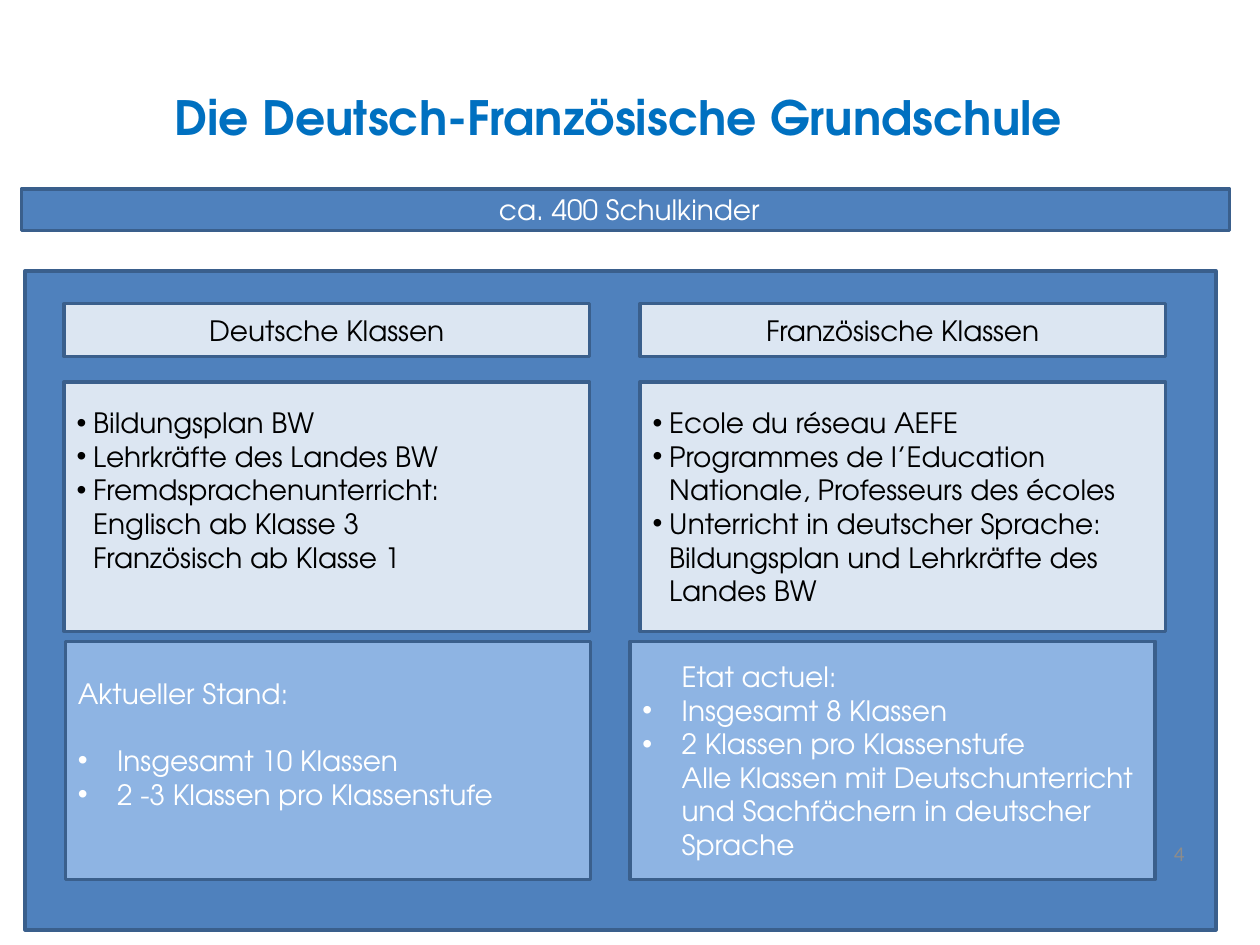
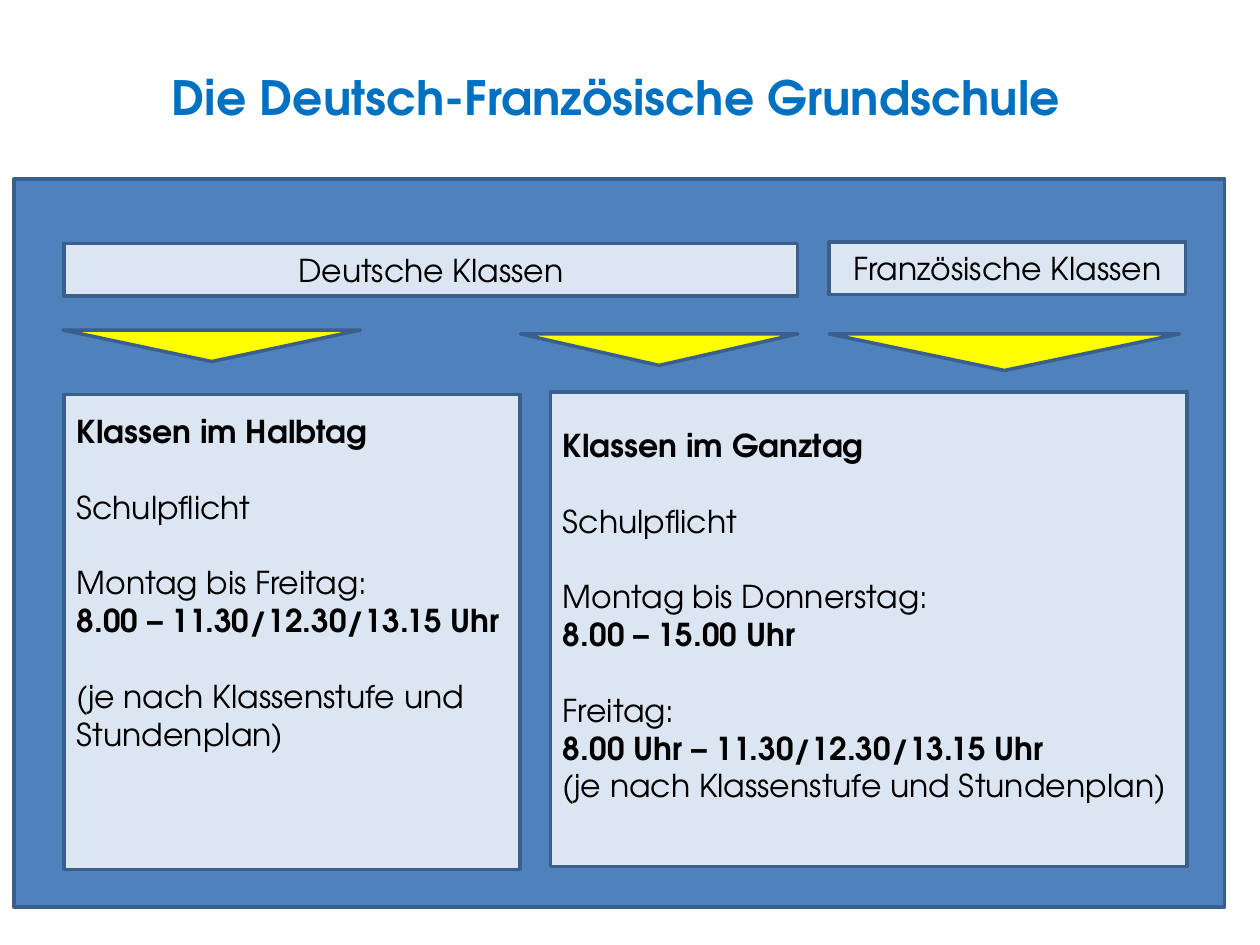
from typing import Any, NamedTuple

from lxml.etree import SubElement
from pptx import Presentation
from pptx.dml.color import RGBColor
from pptx.enum.shapes import MSO_SHAPE
from pptx.enum.text import MSO_ANCHOR, MSO_AUTO_SIZE, PP_ALIGN
from pptx.oxml.ns import qn
from pptx.util import Pt

TITLE = "Die Deutsch-Französische Grundschule "
HEADING_FONT = "TeX Gyre Adventor"
NUMBER_FONT = "Calibri"
TITLE_BLUE, PANEL_BLUE, EDGE_BLUE = "0070C0", "4F81BD", "3A5F8C"
MID_BLUE, PALE_BLUE, YELLOW = "8EB4E3", "DCE6F2", "FFFF00"
WHITE, BLACK, GREY = "FFFFFF", "000000", "8C8C8C"
LINE_HEIGHT = 1.2
SMALL_HANG, WIDE_HANG = 9.5, 22.5


class Area(NamedTuple):
    left: float
    top: float
    width: float
    height: float


class Line(NamedTuple):
    text: str
    bullet: bool = False
    bold: bool = False
    gap: bool = False  # leaves one line free above
    indent: float = 0


class Card(NamedTuple):
    area: Area
    fill: str
    lines: tuple[Line, ...] = ()
    size: float = 16
    color: str = BLACK
    top_inset: float | None = None  # None centres the text both ways


def rgb(value: str) -> RGBColor:
    return RGBColor.from_string(value)


def apply(target: Any, values: dict[str, Any]) -> None:
    for name, value in values.items():
        setattr(target, name, value)


def place(shape: Any, area: Area) -> None:
    apply(shape, {name: Pt(value) for name, value in area._asdict().items()})


def style_span(span: Any, size: float, color: str, bold: bool = False,
               font: str = HEADING_FONT) -> None:
    apply(span.font, {"name": font, "size": Pt(size), "bold": bold})
    span.font.color.rgb = rgb(color)


def add_bullet(para: Any) -> None:
    properties = para._p.get_or_add_pPr()
    SubElement(properties, qn("a:buFont"), typeface="Arial")
    SubElement(properties, qn("a:buChar"), char="•")


def write_lines(frame: Any, card: Card) -> None:
    centred = card.top_inset is None
    apply(frame, {
        "word_wrap": True,
        "margin_top": Pt(3.6 if centred else card.top_inset),
        "vertical_anchor": MSO_ANCHOR.MIDDLE if centred else MSO_ANCHOR.TOP,
    })
    for index, line in enumerate(card.lines):
        para = frame.add_paragraph() if index else frame.paragraphs[0]
        para.alignment = PP_ALIGN.CENTER if centred else PP_ALIGN.LEFT
        if line.gap:
            para.space_before = Pt(card.size * LINE_HEIGHT)
        if line.indent:
            properties = para._p.get_or_add_pPr()
            properties.set("marL", str(Pt(line.indent)))
            properties.set("indent", str(Pt(-line.indent if line.bullet else 0)))
        if line.bullet:
            add_bullet(para)
        span = para.add_run()
        span.text = line.text
        style_span(span, card.size, card.color, line.bold)


def add_outlined(page: Any, kind: MSO_SHAPE, area: Area, fill: str) -> Any:
    shape = page.shapes.add_shape(kind, *map(Pt, area))
    shape.shadow.inherit = False
    shape.fill.solid()
    shape.fill.fore_color.rgb = rgb(fill)
    shape.line.color.rgb = rgb(EDGE_BLUE)
    shape.line.width = Pt(2)
    return shape


def add_card(page: Any, card: Card) -> None:
    shape = add_outlined(page, MSO_SHAPE.RECTANGLE, card.area, card.fill)
    if card.lines:
        write_lines(shape.text_frame, card)


def add_down_triangle(page: Any, area: Area) -> None:
    add_outlined(page, MSO_SHAPE.ISOSCELES_TRIANGLE, area, YELLOW).rotation = 180


def add_page(deck: Any, title_area: Area) -> Any:
    page = deck.slides.add_slide(deck.slide_layouts[5])
    title = page.shapes.title
    place(title, title_area)
    apply(title.text_frame, {"word_wrap": True, "auto_size": MSO_AUTO_SIZE.NONE,
                             "vertical_anchor": MSO_ANCHOR.MIDDLE})
    para = title.text_frame.paragraphs[0]
    para.alignment = PP_ALIGN.CENTER
    span = para.add_run()
    span.text = TITLE
    style_span(span, 27, TITLE_BLUE, bold=True)
    return page


def add_page_number(page: Any, number: str) -> None:
    box = page.shapes.add_textbox(*map(Pt, Area(516.2, 473, 167.8, 28.8)))
    box.text_frame.vertical_anchor = MSO_ANCHOR.MIDDLE
    box.text_frame.word_wrap = True
    para = box.text_frame.paragraphs[0]
    para.alignment = PP_ALIGN.RIGHT
    span = para.add_run()
    span.text = number
    style_span(span, 12, GREY, font=NUMBER_FONT)


def hanging(indent: float, *entries: str) -> tuple[Line, ...]:
    """Entries that start with • become bullets; the others align with their text."""
    return tuple(Line(entry.removeprefix("•"), entry.startswith("•"), indent=indent)
                 for entry in entries)


def build_overview(deck: Any) -> None:
    page = add_page(deck, Area(12.2, 21.6, 689.8, 90))
    add_card(page, Card(Area(14.4, 154.8, 680.4, 376.6), PANEL_BLUE))
    add_card(page, Card(Area(12.2, 108, 690.5, 23.8), PANEL_BLUE,
                        (Line(" ca. 400 Schulkinder"),), color=WHITE))

    german_facts = hanging(
        SMALL_HANG, "•Bildungsplan BW", "•Lehrkräfte des Landes BW",
        "•Fremdsprachenunterricht:", "Englisch ab Klasse 3", "Französisch ab Klasse 1")
    french_facts = hanging(
        SMALL_HANG, "•Ecole du réseau AEFE", "•Programmes de l’Education",
        "Nationale, Professeurs des écoles", "•Unterricht in deutscher Sprache:",
        "Bildungsplan und Lehrkräfte des", "Landes BW")
    width = 300.2
    for left, heading, facts in ((36.7, "Deutsche Klassen", german_facts),
                                 (365.8, "Französische Klassen", french_facts)):
        add_card(page, Card(Area(left, 173.5, width, 30.2), PALE_BLUE, (Line(heading),)))
        add_card(page, Card(Area(left, 218.2, width, 142.6), PALE_BLUE, facts,
                            top_inset=13.7))

    first, second = hanging(WIDE_HANG, "•Insgesamt 10 Klassen",
                            "•2 -3 Klassen pro Klassenstufe")
    german_status = (Line("Aktueller Stand:"), first._replace(gap=True), second)
    french_status = hanging(
        WIDE_HANG, "Etat actuel:", "•Insgesamt 8 Klassen", "•2 Klassen pro Klassenstufe",
        "Alle Klassen mit Deutschunterricht und Sachfächern in deutscher Sprache")
    for left, status, inset in ((37.4, german_status, 20), (360, french_status, 10.4)):
        add_card(page, Card(Area(left, 366.5, width, 136.1), MID_BLUE, status,
                            color=WHITE, top_inset=inset))
    add_page_number(page, "4")


def build_timetable(deck: Any) -> None:
    page = add_page(deck, Area(0, 21.6, 711.4, 67.7))
    half_day = (
        Line("Klassen im Halbtag", bold=True),
        Line("Schulpflicht", gap=True),
        Line("Montag bis Freitag:", gap=True),
        Line("8.00 – 11.30/12.30/13.15 Uhr", bold=True),
        Line("(je nach Klassenstufe und Stundenplan)", gap=True),
    )
    full_day = (
        Line("Klassen im Ganztag", bold=True),
        Line("Schulpflicht", gap=True),
        Line("Montag bis Donnerstag:", gap=True),
        Line("8.00 – 15.00 Uhr", bold=True),
        Line("Freitag:", gap=True),
        Line("8.00 Uhr – 11.30/12.30/13.15 Uhr", bold=True),
        Line("(je nach Klassenstufe und Stundenplan)"),
    )
    for card in (
        Card(Area(7.9, 102.2, 691.9, 416.2), PANEL_BLUE),
        Card(Area(36.7, 139, 419, 30.2), PALE_BLUE, (Line("Deutsche Klassen"),), 18),
        Card(Area(473.8, 138.2, 203.8, 30.2), PALE_BLUE,
             (Line("Französische Klassen"),), 18),
        Card(Area(36.7, 225.4, 260.6, 271.4), PALE_BLUE, half_day, 18, top_inset=10.2),
        Card(Area(314.6, 223.9, 363.6, 271.4), PALE_BLUE, full_day, 18, top_inset=19.7),
    ):
        add_card(page, card)
    for area in (Area(473.8, 190.8, 200.2, 20.9), Area(36, 188.6, 169.9, 18),
                 Area(297.4, 190.8, 158.4, 18)):
        add_down_triangle(page, area)


def main() -> None:
    deck = Presentation()
    apply(deck, {"slide_width": Pt(720), "slide_height": Pt(540)})
    build_overview(deck)
    build_timetable(deck)
    deck.save("out.pptx")


if __name__ == "__main__":
    main()
